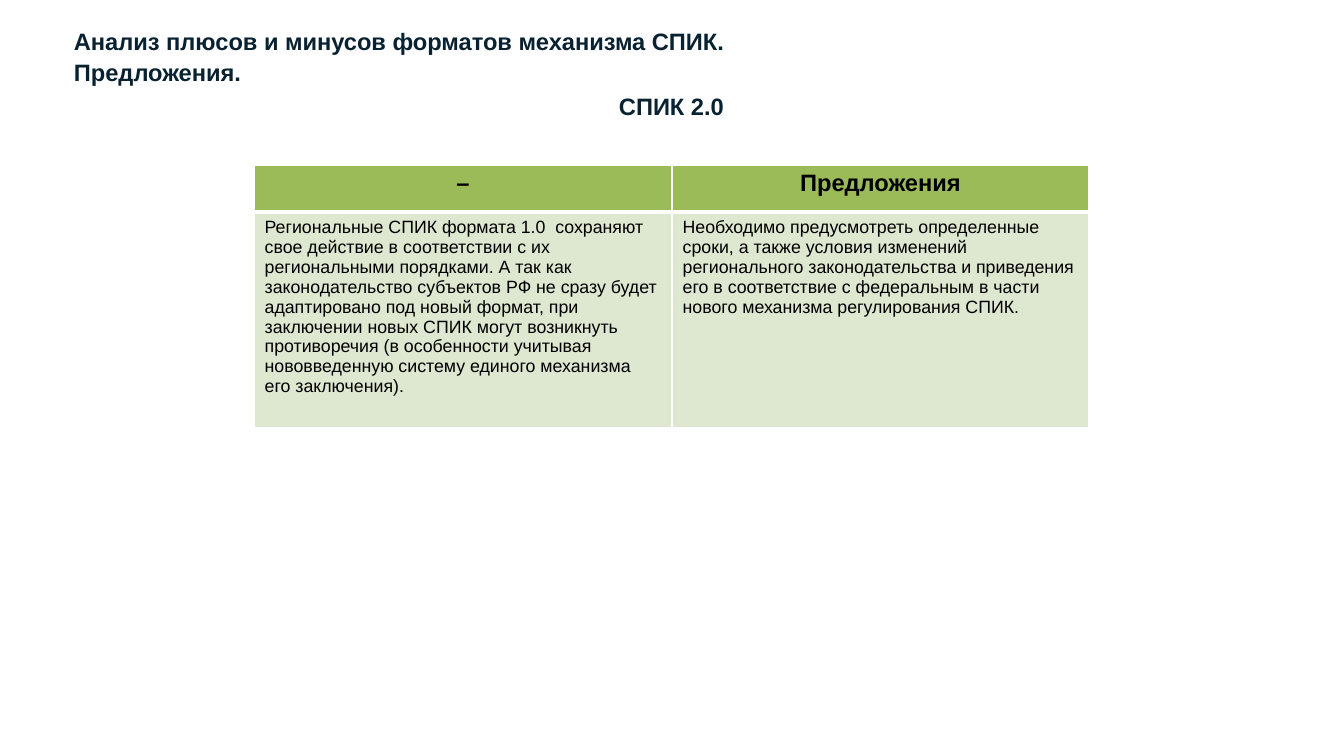
"""Build the slide on the drawbacks of SPIK 2.0 and the proposals for it."""
import pptx
import pptx.dml.color
import pptx.enum.text
import pptx.oxml
import pptx.oxml.ns
import pptx.util

PX = 8572
SLIDE_SIZE = (1344, 756)
ALIGN = pptx.enum.text.PP_ALIGN

HEADING_FORMAT = {"size": pptx.util.Pt(16), "bold": True, "name": "Arial"}
BODY_FORMAT = {"size": pptx.util.Pt(12), "bold": False, "name": "Arial"}

HEADINGS = [
    ("Анализ плюсов и минусов форматов механизма СПИК.\vПредложения.",
     (74, 25, 687, 92), ALIGN.LEFT),
    ("СПИК 2.0", (328, 90, 687, 61), ALIGN.CENTER),
]
HEADING_COLOR = "092231"

COMPARISON = [
    ("–", "Предложения"),
    ("Региональные СПИК формата 1.0  сохраняют свое действие в соответствии "
     "с их региональными порядками. А так как законодательство субъектов РФ "
     "не сразу будет адаптировано под новый формат, при заключении новых СПИК "
     "могут возникнуть противоречия (в особенности учитывая нововведенную "
     "систему единого механизма его заключения).",
     "Необходимо предусмотреть определенные сроки, а также условия изменений "
     "регионального законодательства и приведения его в соответствие с "
     "федеральным в части нового механизма регулирования СПИК."),
]
COMPARISON_CORNER = (254, 165)
COLUMN_WIDTHS = (418, 417)
ROW_HEIGHTS = (47, 216)
ROW_STYLES = [
    {"fill": "9BBB59", "format": HEADING_FORMAT, "align": ALIGN.CENTER,
     "borders": {"L": 1, "R": 1, "T": 1, "B": 3}},
    {"fill": "DEE7D0", "format": BODY_FORMAT, "align": ALIGN.LEFT,
     "borders": {"L": 1, "R": 1, "T": 3, "B": 1}},
]
CELL_COLOR = "000000"
BORDER_COLOR = "FFFFFF"


def px(*lengths):
    return [length * PX for length in lengths]


def color(value):
    return pptx.dml.color.RGBColor.from_string(value)


def write(frame, text, font_format, text_color, align):
    frame.word_wrap = True
    paragraph = frame.paragraphs[0]
    paragraph.text = text
    paragraph.alignment = align
    for run in paragraph.runs:
        for name, value in font_format.items():
            setattr(run.font, name, value)
        run.font.color.rgb = color(text_color)
    return paragraph


def add_heading(slide, text, box, align):
    frame = slide.shapes.add_textbox(*px(*box)).text_frame
    for side in ("left", "top", "right", "bottom"):
        setattr(frame, f"margin_{side}", 0)
    write(frame, text, HEADING_FORMAT, HEADING_COLOR, align).line_spacing = 1.07


def add_borders(cell, borders):
    properties = cell._tc.get_or_add_tcPr()
    for position, (side, points) in enumerate(borders.items()):
        border = pptx.oxml.parse_xml(
            f'<a:ln{side} {pptx.oxml.ns.nsdecls("a")} w="{pptx.util.Pt(points)}">'
            f'<a:solidFill><a:srgbClr val="{BORDER_COLOR}"/></a:solidFill>'
            f'</a:ln{side}>')
        properties.insert(position, border)


def add_comparison(slide):
    size = (sum(COLUMN_WIDTHS), sum(ROW_HEIGHTS))
    table = slide.shapes.add_table(
        len(ROW_HEIGHTS), len(COLUMN_WIDTHS), *px(*COMPARISON_CORNER, *size)).table
    table.horz_banding = False
    for column, width in zip(table.columns, px(*COLUMN_WIDTHS)):
        column.width = width
    for row, height, texts, style in zip(
            table.rows, px(*ROW_HEIGHTS), COMPARISON, ROW_STYLES):
        row.height = height
        for cell, text in zip(row.cells, texts):
            write(cell.text_frame, text, style["format"], CELL_COLOR, style["align"])
            cell.fill.solid()
            cell.fill.fore_color.rgb = color(style["fill"])
            add_borders(cell, style["borders"])


def main():
    presentation = pptx.Presentation()
    presentation.slide_width, presentation.slide_height = px(*SLIDE_SIZE)
    slide = presentation.slides.add_slide(presentation.slide_layouts[6])
    for heading in HEADINGS:
        add_heading(slide, *heading)
    add_comparison(slide)
    presentation.save("out.pptx")


if __name__ == "__main__":
    main()
